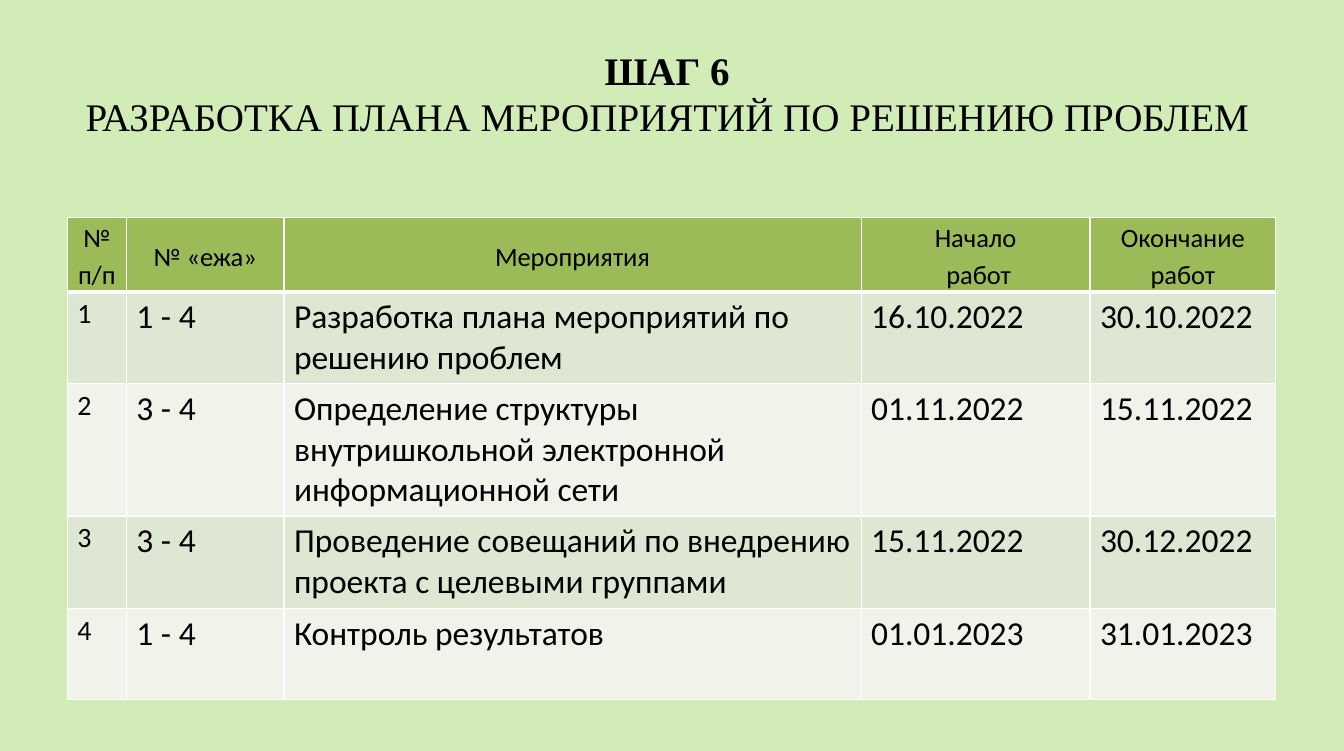
from lxml import etree
from pptx import Presentation
from pptx.dml.color import RGBColor
from pptx.enum import text
from pptx.oxml import ns
from pptx.util import Inches, Pt

TITLE = "ШАГ 6 \vРАЗРАБОТКА ПЛАНА МЕРОПРИЯТИЙ ПО РЕШЕНИЮ ПРОБЛЕМ "
PLAN = [
    ("№ п/п", "№ «ежа»", "Мероприятия", "Начало\n работ", "Окончание работ"),
    ("1", "1 - 4", "Разработка плана мероприятий по решению проблем",
     "16.10.2022", "30.10.2022"),
    ("2", "3 - 4", "Определение структуры внутришкольной электронной информационной сети",
     "01.11.2022", "15.11.2022"),
    ("3", "3 - 4", "Проведение совещаний по внедрению проекта с целевыми группами",
     "15.11.2022", "30.12.2022"),
    ("4", "1 - 4", "Контроль результатов", "01.01.2023", "31.01.2023"),
]
WIDTHS = [0.59, 1.57, 5.75, 2.28, 1.85]
HEIGHTS = [0.73, 0.91, 1.32, 0.92, 0.91]
LEFT, WIDE = 0.67, 12.05

BACK = RGBColor(0xD2, 0xEC, 0xB7)
HEAD = RGBColor(0x9B, 0xBB, 0x59)
BANDS = [RGBColor(0xEF, 0xF3, 0xEA), RGBColor(0xDE, 0xE7, 0xD1)]
BLACK = RGBColor(0, 0, 0)
WHITE = RGBColor(0xFF, 0xFF, 0xFF)


def style(font, name, size, bold=False):
    font.name, font.size, font.bold = name, Pt(size), bold
    font.color.rgb = BLACK


def edge(cell, side, width):
    props = cell._tc.get_or_add_tcPr()
    line = etree.SubElement(props, ns.qn("a:ln" + side), w=str(Pt(width)))
    fill = etree.SubElement(line, ns.qn("a:solidFill"))
    etree.SubElement(fill, ns.qn("a:srgbClr"), val=str(WHITE))


def fill_cell(cell, words, row, col):
    top = row == 0
    cell.text = words
    for side in "LRTB":
        thick = (top and side == "B") or (row == 1 and side == "T")
        edge(cell, side, 3 if thick else 1)
    cell.fill.solid()
    cell.fill.fore_color.rgb = HEAD if top else BANDS[row % 2]
    if top:
        cell.vertical_anchor = text.MSO_ANCHOR.MIDDLE
        cell.margin_left = cell.margin_right = Inches(0.07)
        cell.margin_top = cell.margin_bottom = 0
    size = 19 if top else 20 if col == 0 else 24
    for para in cell.text_frame.paragraphs:
        if top:
            para.alignment = text.PP_ALIGN.CENTER
            para.line_spacing = 1.15
        for run in para.runs:
            style(run.font, "Calibri", size)


def add_title(slide):
    title = slide.shapes.title
    title.left, title.top = Inches(LEFT), Inches(0.3)
    title.width, title.height = Inches(WIDE), Inches(1.25)
    frame = title.text_frame
    frame.text = TITLE
    frame.vertical_anchor = text.MSO_ANCHOR.MIDDLE
    frame.margin_left = frame.margin_right = Inches(0.13)
    frame.margin_top = frame.margin_bottom = Inches(0.07)
    para = frame.paragraphs[0]
    para.alignment = text.PP_ALIGN.CENTER
    for run, bold in zip(para.runs, (True, False)):
        style(run.font, "Times New Roman", 28, bold)


def add_plan(slide):
    table = slide.shapes.add_table(
        len(PLAN), len(WIDTHS), Inches(LEFT), Inches(2.17),
        Inches(WIDE), Inches(sum(HEIGHTS))).table
    for col, width in zip(table.columns, WIDTHS):
        col.width = Inches(width)
    for row, height in zip(table.rows, HEIGHTS):
        row.height = Inches(height)
    for r, line in enumerate(PLAN):
        for c, words in enumerate(line):
            fill_cell(table.cell(r, c), words, r, c)


def main():
    deck = Presentation()
    deck.slide_width, deck.slide_height = Inches(13.39), Inches(7.48)
    slide = deck.slides.add_slide(deck.slide_layouts[5])
    slide.background.fill.solid()
    slide.background.fill.fore_color.rgb = BACK
    add_title(slide)
    add_plan(slide)
    deck.save("out.pptx")


if __name__ == "__main__":
    main()
